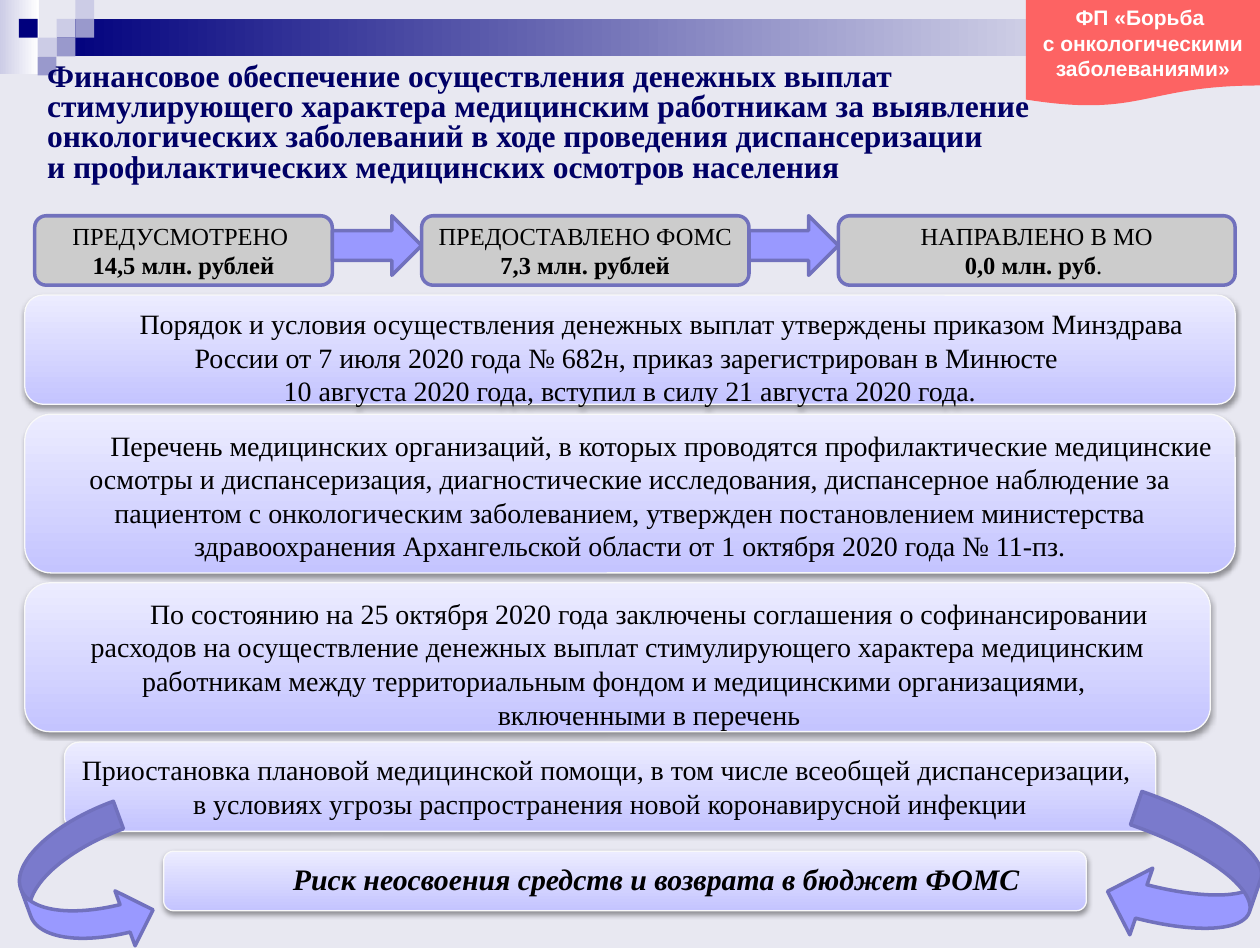
from dataclasses import dataclass

from lxml.etree import SubElement
from pptx import Presentation
from pptx.dml.color import RGBColor
from pptx.enum.shapes import MSO_SHAPE as Shape
from pptx.enum.text import MSO_ANCHOR as Anchor, PP_ALIGN as Align
from pptx.oxml.ns import qn
from pptx.util import Cm, Pt


@dataclass(frozen=True)
class Theme:
    """Colours, fonts and type sizes of the slide."""
    background: str = "E8E8F1"
    navy: str = "00007D"
    title: str = "000066"
    pale: str = "CCCCE6"
    lilac: str = "9999CC"
    white: str = "FFFFFF"
    black: str = "000000"
    card: str = "CCCCCC"
    arrow: str = "9999FF"
    outline: str = "7171BD"
    badge: str = "FD6363"
    panel_low: str = "C4C4FF"
    panel_high: str = "ECECFF"
    panel_edge: str = "F9F9F9"
    serif: str = "Times New Roman"
    sans: str = "Arial"
    badge_size: int = 12
    card_size: int = 14
    panel_size: int = 16
    risk_size: int = 17
    title_size: int = 18


@dataclass(frozen=True)
class Box:
    """A rectangle in centimetres."""
    left: float
    top: float
    width: float
    height: float

    def inner(self, left, top, width, height):
        """Return a box placed relative to this one."""
        return Box(self.left + left, self.top + top, width, height)

    def lengths(self):
        """Return the four lengths for python-pptx."""
        return Cm(self.left), Cm(self.top), Cm(self.width), Cm(self.height)


THEME = Theme()


def rgb(value):
    """Return a colour from its hex value."""
    return RGBColor.from_string(value)


def add_figure(page, kind, box, fill, line=None, weight=2):
    """Add a shape with a solid fill, or a gradient given as (start, end, angle)."""
    figure = page.shapes.add_shape(kind, *box.lengths())
    figure.shadow.inherit = False
    if isinstance(fill, tuple):
        start, end, angle = fill
        figure.fill.gradient()
        figure.fill.gradient_angle = angle
        for stop, colour in zip(figure.fill.gradient_stops, (start, end)):
            stop.color.rgb = rgb(colour)
    else:
        figure.fill.solid()
        figure.fill.fore_color.rgb = rgb(fill)
    if line:
        figure.line.color.rgb = rgb(line)
        figure.line.width = Pt(weight)
    else:
        figure.line.fill.background()
    return figure


def write(figure, text, size, colour=THEME.black, font=THEME.serif, bold=False,
          italic=False, align=Align.CENTER, anchor=Anchor.MIDDLE):
    """Fill a shape with evenly formatted text and return its paragraphs."""
    frame = figure.text_frame
    frame.word_wrap = True
    frame.vertical_anchor = anchor
    frame.text = text
    for para in frame.paragraphs:
        para.alignment = align
        for span in para.runs:
            span.font.name, span.font.size = font, Pt(size)
            span.font.bold, span.font.italic = bold, italic
            span.font.color.rgb = rgb(colour)
    return frame.paragraphs


def add_drop_shadow(figure):
    """Give a shape a soft shadow below it."""
    effects = figure.element.spPr.find(qn("a:effectLst"))
    shadow = SubElement(effects, qn("a:outerShdw"), blurRad=str(Pt(3.1)),
                        dist=str(Pt(1.6)), dir="5400000", rotWithShape="0")
    colour = SubElement(shadow, qn("a:srgbClr"), val=THEME.black)
    SubElement(colour, qn("a:alpha"), val="38000")


def add_header(page, box):
    """Draw the gradient band with its mosaic of tiles."""
    tile = 0.38
    add_figure(page, Shape.RECTANGLE, box.inner(0, 0, 0.78, box.height),
               (THEME.pale, THEME.white, 0))
    band = box.inner(3 * tile, tile, box.width - 3 * tile, 2 * tile)
    add_figure(page, Shape.RECTANGLE, band, (THEME.navy, THEME.white, 0))
    tiles = {
        THEME.pale: [(3, 1), (4, 0), (2, 2)],
        THEME.lilac: [(4, 1), (3, 2), (2, 3)],
        THEME.navy: [(1, 1)],
    }
    for colour, cells in tiles.items():
        for column, row in cells:
            add_figure(page, Shape.RECTANGLE,
                       box.inner(column * tile, row * tile, tile, tile), colour)


def add_title(page, box):
    """Write the slide title."""
    title = page.shapes.add_textbox(*box.lengths())
    text = ("Финансовое обеспечение осуществления денежных выплат\n"
            "стимулирующего характера медицинским работникам за выявление "
            "онкологических заболеваний в ходе проведения диспансеризации \v"
            "и профилактических медицинских осмотров населения")
    for para in write(title, text, THEME.title_size, THEME.title, bold=True,
                      align=Align.LEFT, anchor=Anchor.TOP):
        para.line_spacing = 0.8


def add_badge(page, box):
    """Draw the project flag in the corner."""
    badge = add_figure(page, Shape.FLOWCHART_DOCUMENT, box, THEME.badge)
    write(badge, "ФП «Борьба \vс онкологическими заболеваниями»", THEME.badge_size,
          THEME.white, THEME.sans, bold=True)


def add_funding_chain(page, box):
    """Draw the funding cards from left to right, joined by arrows."""
    gap, left = 1.8, 0
    cards = [
        (6, "ПРЕДУСМОТРЕНО ", "14,5 млн. рублей", ""),
        (6.6, "ПРЕДОСТАВЛЕНО ФОМС ", "7,3 млн. рублей", ""),
        (8, "НАПРАВЛЕНО В МО", "0,0 млн. руб", ". "),
    ]
    for width, stage, amount, ending in cards:
        if left:
            add_figure(page, Shape.RIGHT_ARROW, box.inner(left - gap, 0, gap, 1.2),
                       THEME.arrow, THEME.outline)
        card = add_figure(page, Shape.FLOWCHART_ALTERNATE_PROCESS,
                          box.inner(left, 0, width, box.height),
                          THEME.card, THEME.outline)
        total = write(card, f"{stage}\n{amount}", THEME.card_size)[1]
        total.runs[0].font.bold = True
        if ending:
            span = total.add_run()
            span.text = ending
            span.font.name, span.font.size = THEME.serif, Pt(THEME.card_size)
            span.font.color.rgb = rgb(THEME.black)
        left += width + gap


def add_panel(page, box, text, size=THEME.panel_size, indent=1.27, strong=False):
    """Draw one shaded panel with centred text."""
    panel = add_figure(page, Shape.ROUNDED_RECTANGLE, box,
                       (THEME.panel_low, THEME.panel_high, 90), THEME.panel_edge, 0.75)
    add_drop_shadow(panel)
    for para in write(panel, text, size, bold=strong, italic=strong, anchor=Anchor.TOP):
        para._p.get_or_add_pPr().set("indent", str(Cm(indent)))


def add_facts(page, box):
    """Stack the three panels on the rules and agreements."""
    gap, top = 0.2, 0
    facts = [
        (box.width, 2.2,
         "Порядок и условия осуществления денежных выплат утверждены приказом Минздрава "
         "России от 7 июля 2020 года № 682н, приказ зарегистрирован в Минюсте \v"
         "10 августа 2020 года, вступил в силу 21 августа 2020 года."),
        (box.width, 3.2,
         "Перечень медицинских организаций, в которых проводятся профилактические "
         "медицинские осмотры и диспансеризация, диагностические исследования, "
         "диспансерное наблюдение за пациентом с онкологическим заболеванием, утвержден "
         "постановлением министерства здравоохранения Архангельской области "
         "от 1 октября 2020 года № 11-пз."),
        (box.width - 0.5, 3,
         "По состоянию на 25 октября 2020 года заключены соглашения о софинансировании "
         "расходов на осуществление денежных выплат стимулирующего характера медицинским "
         "работникам между территориальным фондом и медицинскими организациями, \n"
         "включенными в перечень"),
    ]
    for width, height, text in facts:
        add_panel(page, box.inner(0, top, width, height), text)
        top += height + gap


def add_risk(page, box):
    """Draw the cause, the risk and the curved arrows between them."""
    add_panel(page, box.inner(0.8, 0, 22, 1.8),
              "Приостановка плановой медицинской помощи, в том числе всеобщей "
              "диспансеризации, \nв условиях угрозы распространения новой "
              "коронавирусной инфекции", indent=0)
    add_panel(page, box.inner(2.8, 2.2, 18.6, 1.2),
              "Риск неосвоения средств и возврата в бюджет ФОМС",
              THEME.risk_size, strong=True)
    arrows = [
        (Shape.CURVED_RIGHT_ARROW, box.inner(0, 1.51, 2.36, 2.92), -20.1),
        (Shape.CURVED_LEFT_ARROW, box.inner(21.98, 1.38, 2.84, 2.84), 19),
    ]
    for kind, place, angle in arrows:
        arrow = add_figure(page, kind, place, THEME.arrow, THEME.outline)
        arrow.rotation = angle


def main():
    """Build the slide and save it."""
    deck = Presentation()
    deck.slide_width, deck.slide_height = Cm(25.4), Cm(19.11)
    page = deck.slides.add_slide(deck.slide_layouts[6])
    page.background.fill.solid()
    page.background.fill.fore_color.rgb = rgb(THEME.background)
    add_header(page, Box(0, 0, 25.4, 1.5))
    add_title(page, Box(0.7, 1.15, 23.6, 2.4))
    add_badge(page, Box(20.68, 0, 4.72, 2.15))
    add_funding_chain(page, Box(0.7, 4.35, 24.2, 1.4))
    add_facts(page, Box(0.5, 5.95, 24.4, 8.8))
    add_risk(page, Box(0.5, 14.96, 24.9, 4.15))
    deck.save("out.pptx")


if __name__ == "__main__":
    main()
